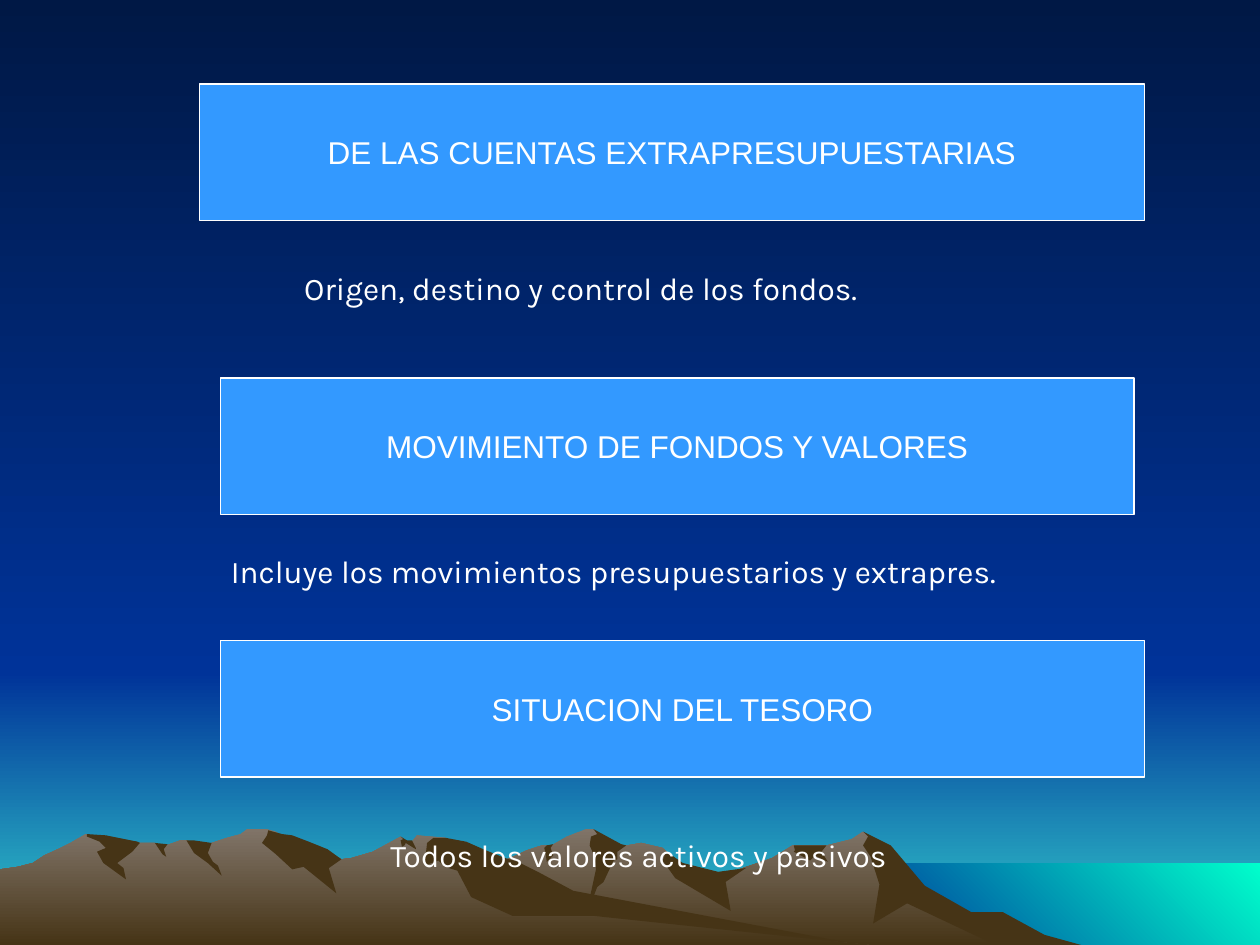
from pptx import Presentation, util as u
from pptx.dml.color import RGBColor
from pptx.enum import shapes, text

NIGHT = RGBColor(0x00, 0x18, 0x45)
BLUE = RGBColor(0x00, 0x33, 0x99)
TEAL = RGBColor(0x33, 0xCC, 0xCC)
AQUA = RGBColor(0x00, 0xFF, 0xCC)
ROCK = RGBColor(0x80, 0x74, 0x68)
EARTH = RGBColor(0x46, 0x34, 0x16)
BOX = RGBColor(0x33, 0x99, 0xFF)
WHITE = RGBColor(0xFF, 0xFF, 0xFF)

COLS, ROWS = 120, 90
WIDE, HIGH = u.Inches(10), u.Inches(7.5)
UNIT = u.Inches(0.01)
DOWN, RISE = 270, 45

RANGE = [
    (802, 740), (778, 727), (764, 723), (723, 698), (702, 671), (685, 660),
    (676, 666), (656, 671), (629, 671), (613, 681), (566, 697), (536, 690),
    (529, 676), (526, 673), (509, 669), (486, 673), (474, 661), (471, 658),
    (465, 658), (450, 664), (438, 671), (430, 671), (418, 675), (405, 681),
    (394, 685), (355, 698), (327, 709), (277, 739), (258, 750), (821, 750)]

EAST = [
    [(796, 724), (771, 724), (734, 703), (707, 671), (685, 660), (689, 664),
     (685, 671), (691, 680), (698, 702), (693, 733), (720, 717), (790, 750),
     (858, 750), (829, 742)],
    [(471, 658), (474, 662), (469, 664), (468, 671), (472, 680), (473, 690),
     (465, 727), (474, 704), (479, 700), (487, 683), (490, 682), (490, 676),
     (497, 671), (493, 670)],
    [(529, 676), (528, 678), (526, 683), (536, 697), (580, 723), (576, 700),
     (592, 689), (570, 692), (542, 685)],
    [(650, 671), (630, 671), (631, 675), (630, 676), (643, 683), (647, 679),
     (657, 684), (652, 676), (656, 671)],
    [(433, 677), (432, 673), (434, 671), (439, 670), (437, 673), (439, 679),
     (434, 684)]]

RIDGE = [
    (690, 750), (667, 748), (432, 712), (354, 665), (331, 663), (327, 668),
    (323, 668), (318, 664), (296, 676), (279, 681), (271, 682), (260, 676),
    (236, 681), (223, 663), (219, 660), (212, 658), (196, 658), (191, 662),
    (180, 665), (168, 669), (160, 671), (148, 667), (143, 667), (132, 671),
    (128, 671), (123, 669), (111, 669), (94, 671), (68, 662), (56, 669),
    (46, 674), (35, 679), (26, 685), (14, 688), (0, 690), (0, 750)]

WEST = [
    [(212, 663), (208, 669), (219, 678), (232, 690), (241, 688), (267, 709),
     (261, 689), (271, 682), (260, 674), (245, 668), (232, 663), (224, 662),
     (213, 659)],
    [(370, 668), (354, 665), (344, 665), (339, 669), (337, 687), (348, 683),
     (353, 688), (363, 691), (374, 712), (407, 727), (472, 727), (690, 750),
     (683, 750), (455, 707), (427, 692), (411, 684), (401, 681), (386, 675)],
    [(318, 667), (320, 666), (318, 664), (323, 667), (327, 667), (330, 673),
     (330, 674), (322, 669), (321, 671), (319, 672)],
    [(154, 667), (168, 669), (165, 677), (169, 684), (173, 687), (176, 695),
     (165, 685), (154, 677), (148, 667)],
    [(133, 670), (130, 674), (132, 680), (129, 678), (123, 669)],
    [(109, 668), (111, 669), (105, 676), (93, 685), (98, 689), (100, 698),
     (82, 685), (77, 676), (84, 673), (79, 668), (69, 664), (69, 662),
     (84, 663), (94, 665)]]


def area(col, row, cols, rows):
    """Turn grid cells into left, top, width and height."""
    return [int(n) for n in (WIDE * col / COLS, HIGH * row / ROWS,
                             WIDE * cols / COLS, HIGH * rows / ROWS)]


def blend(fill, start, end, turn=DOWN):
    """Fill with a two-colour gradient."""
    fill.gradient()
    fill.gradient_angle = turn
    for stop, hue in zip(fill.gradient_stops, (start, end)):
        stop.color.rgb = hue


def flat(fill, hue):
    """Fill with one colour."""
    fill.solid()
    fill.fore_color.rgb = hue


def band(slide, cells, start, end, turn=DOWN):
    """Add a borderless gradient rectangle."""
    shape = slide.shapes.add_shape(shapes.MSO_SHAPE.RECTANGLE, *area(*cells))
    shape.shadow.inherit = False
    shape.line.fill.background()
    blend(shape.fill, start, end, turn)


def rock(slide, points):
    """Add a closed borderless outline and return it."""
    form = slide.shapes.build_freeform(*points[0], scale=UNIT)
    form.add_line_segments(points[1:], close=True)
    shape = form.convert_to_shape()
    shape.shadow.inherit = False
    shape.line.fill.background()
    return shape


def hills(slide, base, shades):
    """Add a mountain range and its shaded slopes."""
    blend(rock(slide, base).fill, ROCK, EARTH)
    for points in shades:
        flat(rock(slide, points).fill, EARTH)


def write(frame, words, face, align):
    """Put one white run into a text frame."""
    para = frame.paragraphs[0]
    para.alignment = align
    run = para.add_run()
    run.text = words
    run.font.name = face
    run.font.size = u.Pt(18)
    run.font.color.rgb = WHITE


def panel(slide, words, col, row, cols):
    """Add a bordered heading box."""
    shape = slide.shapes.add_shape(shapes.MSO_SHAPE.RECTANGLE,
                                   *area(col, row, cols, 13))
    shape.shadow.inherit = False
    flat(shape.fill, BOX)
    shape.line.color.rgb = WHITE
    shape.line.width = u.Pt(1)
    shape.text_frame.word_wrap = False
    shape.text_frame.vertical_anchor = text.MSO_ANCHOR.MIDDLE
    write(shape.text_frame, words, "Arial", text.PP_ALIGN.CENTER)


def note(slide, words, col, row, cols):
    """Add an explanatory line below a heading box."""
    box = slide.shapes.add_textbox(*area(col, row, cols, 6))
    box.text_frame.word_wrap = True
    write(box.text_frame, words, "Karla", text.PP_ALIGN.LEFT)


def main():
    """Build the slide and save it."""
    deck = Presentation()
    deck.slide_width, deck.slide_height = WIDE, HIGH
    slide = deck.slides.add_slide(deck.slide_layouts[6])
    blend(slide.background.fill, NIGHT, BLUE)
    band(slide, (0, 64, COLS, 26), BLUE, TEAL)
    band(slide, (0, 0, COLS, 64), NIGHT, BLUE)
    band(slide, (82, 82.2, 38, 7.8), BLUE, AQUA, RISE)
    hills(slide, RANGE, EAST)
    hills(slide, RIDGE, WEST)
    panel(slide, "DE LAS CUENTAS EXTRAPRESUPUESTARIAS", 19, 8, 90)
    note(slide, "Origen, destino y control de los fondos.", 27.8, 25, 65.8)
    panel(slide, "MOVIMIENTO DE FONDOS Y VALORES", 21, 36, 87)
    note(slide, "Incluye los movimientos presupuestarios y extrapres.",
         20.8, 52, 99.2)
    panel(slide, "SITUACION DEL TESORO", 21, 61, 88)
    note(slide, "Todos los valores activos y pasivos", 36, 79, 59)
    deck.save("out.pptx")


if __name__ == "__main__":
    main()
